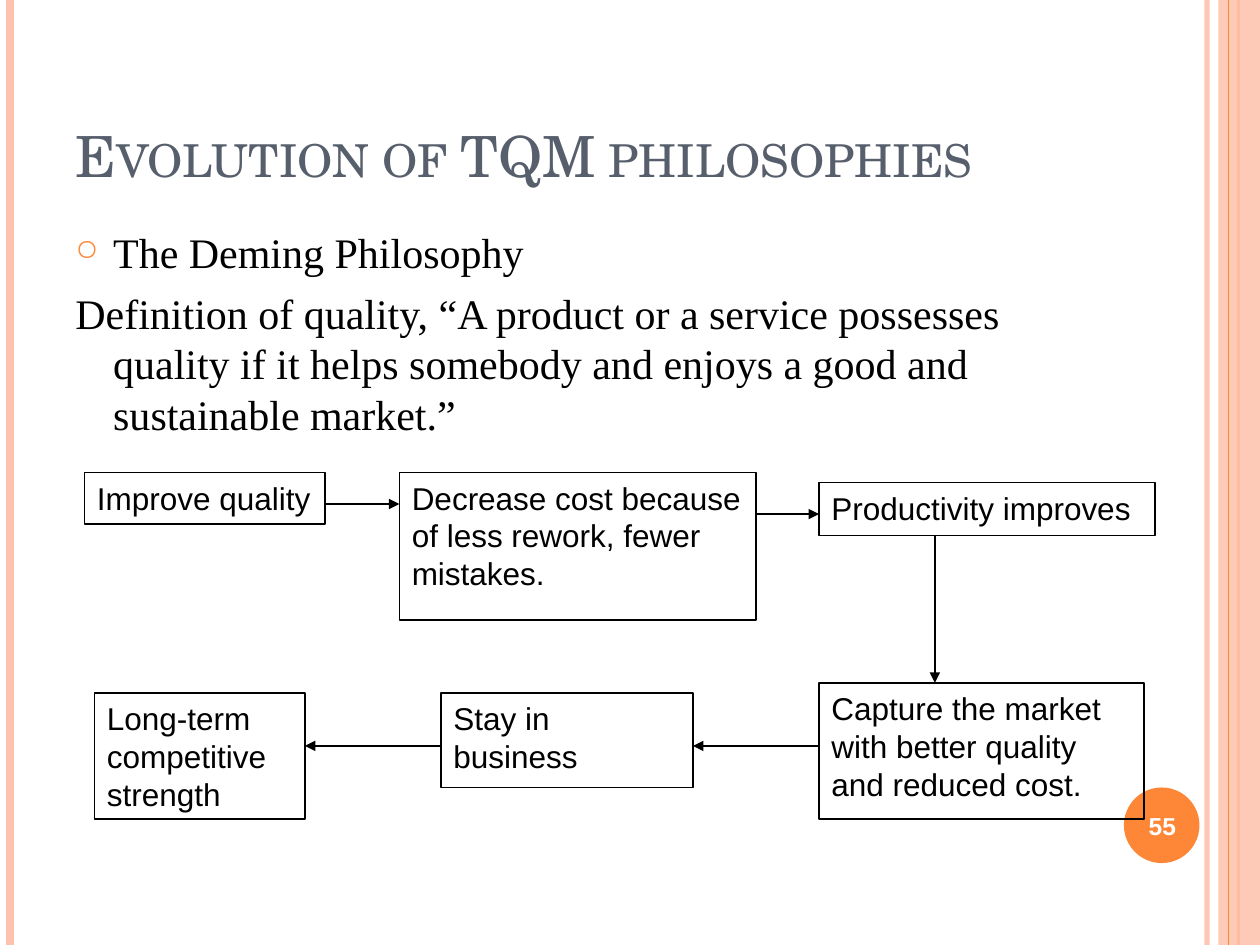
from lxml import etree
from pptx import Presentation
from pptx.dml.color import RGBColor
from pptx.enum import shapes, text
from pptx.oxml.ns import qn
from pptx.util import Inches, Pt

PEACH = RGBColor(0xFE, 0xC3, 0xAE)
ORANGE = RGBColor(0xFE, 0x86, 0x37)
SLATE = RGBColor(0x57, 0x5F, 0x6D)
BLACK = RGBColor(0, 0, 0)
WHITE = RGBColor(0xFF, 0xFF, 0xFF)

# Decoration: x, colour, width in points, opacity in percent
STRIPES = [(9.58, PEACH, 3, 93), (0.08, PEACH, 4.5, 100), (9.83, ORANGE, 1.5, 100)]

# Flow chart: wording, left, top, width, height, wrap
BOXES = [
    ("Improve quality", 0.67, 3.75, 1.91, 0.41, False),
    ("Decrease cost because of less rework, fewer mistakes.", 3.17, 3.75, 2.83, 1.17, True),
    ("Productivity improves", 6.5, 3.83, 2.67, 0.42, False),
    ("Capture the market with better quality and reduced cost.", 6.5, 5.42, 2.58, 1.08, True),
    ("Stay in business", 3.5, 5.5, 2, 0.75, True),
    ("Long-term competitive strength", 0.75, 5.5, 1.67, 1, True),
]
ARROWS = [
    (2.58, 4, 3.17, 4),
    (6, 4.08, 6.5, 4.08),
    (7.42, 4.25, 7.42, 5.42),
    (6.5, 5.92, 5.5, 5.92),
    (3.5, 5.92, 2.42, 5.92),
]


def sub(node, tag, **attrs):
    return etree.SubElement(node, qn(tag), **attrs)


def fade(part, alpha):
    """Set the opacity of the colour inside a fill or line."""
    if alpha < 100:
        color = next(part.iter(qn("a:srgbClr")))
        sub(color, "a:alpha", val=str(alpha * 1000))


def style(para, size, font, color, bold=False):
    for run in para.runs:
        run.font.size = Pt(size)
        run.font.name = font
        run.font.color.rgb = color
        run.font.bold = bold


def add_line(slide, x1, y1, x2, y2, color, width, alpha=100, head=False):
    line = slide.shapes.add_connector(
        shapes.MSO_CONNECTOR.STRAIGHT, Inches(x1), Inches(y1), Inches(x2), Inches(y2))
    line.line.color.rgb = color
    line.line.width = Pt(width)
    props = line._element.spPr
    fade(props, alpha)
    if head:
        sub(props.find(qn("a:ln")), "a:tailEnd", type="triangle")
    sub(props, "a:effectLst")


def add_shape(slide, kind, x, y, w, h, fill=None, alpha=100):
    shape = slide.shapes.add_shape(kind, Inches(x), Inches(y), Inches(w), Inches(h))
    shape.shadow.inherit = False
    shape.line.fill.background()
    if fill is None:
        shape.fill.background()
    else:
        shape.fill.solid()
        shape.fill.fore_color.rgb = fill
        fade(shape._element.spPr, alpha)
    return shape


def add_text(slide, words, x, y, w, h, anchor=text.MSO_ANCHOR.TOP):
    box = slide.shapes.add_textbox(Inches(x), Inches(y), Inches(w), Inches(h))
    frame = box.text_frame
    frame.word_wrap = True
    frame.vertical_anchor = anchor
    frame.text = words
    return frame


def add_box(slide, words, x, y, w, h, wrap):
    box = add_shape(slide, shapes.MSO_SHAPE.RECTANGLE, x, y, w, h)
    box.line.color.rgb = BLACK
    box.line.width = Pt(1)
    frame = box.text_frame
    frame.word_wrap = wrap
    frame.vertical_anchor = text.MSO_ANCHOR.TOP
    frame.text = words
    para = frame.paragraphs[0]
    para.alignment = text.PP_ALIGN.LEFT
    style(para, 18, "Arial", BLACK)


def hang(para, bullet=None):
    """Give a hanging indent, with an orange bullet if one is named."""
    props = para._p.get_or_add_pPr()
    props.set("marL", str(Inches(0.3)))
    props.set("indent", str(-Inches(0.3)))
    if bullet:
        sub(sub(props, "a:buClr"), "a:srgbClr", val=str(ORANGE))
        sub(props, "a:buSzPct", val="70000")
        sub(props, "a:buChar", char=bullet)
    else:
        sub(props, "a:buNone")


def main():
    deck = Presentation()
    deck.slide_width, deck.slide_height = Inches(10), Inches(7.5)
    slide = deck.slides.add_slide(deck.slide_layouts[6])

    # Side stripes and number disc
    for x, color, width, alpha in STRIPES:
        add_line(slide, x, 0, x, 7.5, color, width, alpha)
    add_shape(slide, shapes.MSO_SHAPE.RECTANGLE, 9.67, 0, 0.33, 7.5, PEACH, 87)
    add_line(slide, 9.75, 0, 9.75, 7.5, ORANGE, 0.75)
    add_shape(slide, shapes.MSO_SHAPE.OVAL, 8.92, 6.25, 0.6, 0.6, ORANGE)

    # Title in small capitals
    title = add_text(slide, "Evolution of TQM philosophies",
                     0.5, 0.3, 8.17, 1.25, text.MSO_ANCHOR.BOTTOM).paragraphs[0]
    style(title, 32.4, "TeX Gyre Schola", SLATE)
    title.runs[0].font._element.set("cap", "small")

    # Body
    body = add_text(slide, "The Deming Philosophy\nDefinition of quality, “A product or a "
                    "service possesses quality if it helps somebody and enjoys a good and "
                    "sustainable market.”", 0.5, 1.75, 8.17, 5.33)
    for para, bullet in zip(body.paragraphs, ("○", None)):
        para.space_before = Pt(6)
        hang(para, bullet)
        style(para, 24, "Times New Roman", BLACK)

    # Slide number
    num = add_text(slide, "55", 8.89, 6.27, 0.67, 0.57, text.MSO_ANCHOR.MIDDLE).paragraphs[0]
    num.alignment = text.PP_ALIGN.CENTER
    style(num, 14, "Arial", WHITE, True)

    # Flow chart
    for box in BOXES:
        add_box(slide, *box)
    for ends in ARROWS:
        add_line(slide, *ends, BLACK, 0.75, head=True)

    deck.save("out.pptx")


if __name__ == "__main__":
    main()
